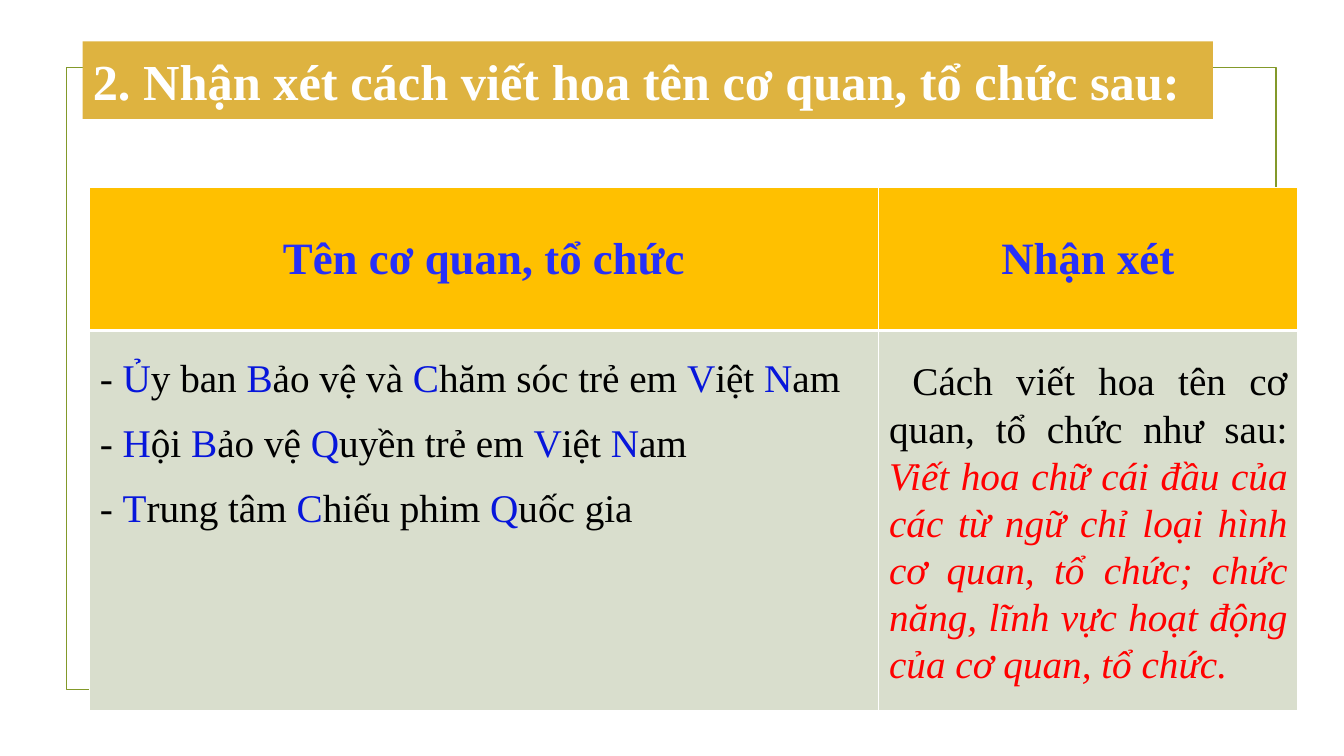
"""Build a Vietnamese lesson slide on capitalising the names of organisations."""
import dataclasses
import itertools

import pptx
import pptx.dml.color
import pptx.enum.shapes
import pptx.enum.text
import pptx.oxml
import pptx.oxml.ns
import pptx.util

Inches = pptx.util.Inches
Align = pptx.enum.text.PP_ALIGN
Anchor = pptx.enum.text.MSO_ANCHOR

FONT = "Times New Roman"
WHITE, BLACK, RED = "FFFFFF", "000000", "FF0000"
OLIVE, GOLD, AMBER, SAGE = "83992A", "DEB340", "FFC000", "D9DECD"
HEADING_BLUE, CAPITAL_BLUE = "2630F8", "0716DB"


@dataclasses.dataclass(frozen=True)
class Span:
    text: str
    color: str
    size: int = 28
    bold: bool = False
    italic: bool = False


@dataclasses.dataclass(frozen=True)
class Cell:
    paragraphs: list[list[Span]]
    fill: str
    bottom_border: float = 1
    align: Align = Align.LEFT
    anchor: Anchor = Anchor.TOP
    line_spacing: float = 1.0


def rgb(color: str) -> pptx.dml.color.RGBColor:
    return pptx.dml.color.RGBColor.from_string(color)


def paint(fill: pptx.dml.fill.FillFormat, color: str) -> None:
    fill.solid()
    fill.fore_color.rgb = rgb(color)


def write(frame: pptx.text.text.TextFrame, paragraphs: list[list[Span]],
          align: Align, line_spacing: float = 1.0) -> None:
    frame.word_wrap = True
    for index, spans in enumerate(paragraphs):
        paragraph = frame.add_paragraph() if index else frame.paragraphs[0]
        paragraph.alignment = align
        paragraph.line_spacing = line_spacing
        for span in spans:
            run = paragraph.add_run()
            run.text = span.text
            run.font.name = FONT
            run.font.size = pptx.util.Pt(span.size)
            run.font.bold = span.bold
            run.font.italic = span.italic
            run.font.color.rgb = rgb(span.color)


def mark_capitals(line: str) -> list[Span]:
    return [Span("".join(letters), CAPITAL_BLUE if capital else BLACK)
            for capital, letters in itertools.groupby(line, str.isupper)]


def add_borders(cell: pptx.table._Cell, bottom: float) -> None:
    properties = cell._tc.get_or_add_tcPr()
    for side, points in {"L": 1, "R": 1, "T": 1, "B": bottom}.items():
        properties.append(pptx.oxml.parse_xml(
            f'<a:ln{side} {pptx.oxml.ns.nsdecls("a")} w="{pptx.util.Pt(points)}">'
            f'<a:solidFill><a:srgbClr val="{WHITE}"/></a:solidFill></a:ln{side}>'))


def add_frame(slide: pptx.slide.Slide) -> None:
    frame = slide.shapes.add_shape(
        pptx.enum.shapes.MSO_SHAPE.RECTANGLE,
        Inches(0.66), Inches(0.67), Inches(12), Inches(6.17))
    frame.shadow.inherit = False
    frame.fill.background()
    frame.line.color.rgb = rgb(OLIVE)
    frame.line.width = pptx.util.Pt(1.25)
    slide.shapes._spTree.insert(2, frame._element)


def format_title(slide: pptx.slide.Slide, heading: str) -> None:
    title = slide.shapes.title
    title.left, title.top = Inches(0.82), Inches(0.41)
    title.width, title.height = Inches(11.21), Inches(0.77)
    title._element.spPr.append(pptx.oxml.parse_xml(
        f'<a:prstGeom {pptx.oxml.ns.nsdecls("a")} prst="roundRect"><a:avLst/></a:prstGeom>'))
    paint(title.fill, GOLD)
    title.text_frame.auto_size = pptx.enum.text.MSO_AUTO_SIZE.NONE
    title.text_frame.vertical_anchor = Anchor.MIDDLE
    write(title.text_frame, [[Span(heading, WHITE, 36, bold=True)]], Align.JUSTIFY)


def add_grid(slide: pptx.slide.Slide, rows: list[list[Cell]]) -> None:
    widths, heights = (7.82, 4.16), (1.42, 3.77)
    grid = slide.shapes.add_table(
        len(heights), len(widths), Inches(0.89), Inches(1.86),
        Inches(sum(widths)), Inches(sum(heights))).table
    for column, width in zip(grid.columns, widths):
        column.width = Inches(width)
    for row, height, contents in zip(grid.rows, heights, rows):
        row.height = Inches(height)
        for cell, content in zip(row.cells, contents):
            add_borders(cell, content.bottom_border)
            paint(cell.fill, content.fill)
            cell.vertical_anchor = content.anchor
            write(cell.text_frame, content.paragraphs, content.align, content.line_spacing)


def add_remark(slide: pptx.slide.Slide, spans: list[Span]) -> None:
    remark = slide.shapes.add_textbox(
        Inches(8.72), Inches(3.49), Inches(4.15), Inches(4))
    write(remark.text_frame, [spans], Align.JUSTIFY)


def main() -> None:
    presentation = pptx.Presentation()
    presentation.slide_width, presentation.slide_height = Inches(13.33), Inches(7.5)
    slide = presentation.slides.add_slide(presentation.slide_layouts[5])

    headings = [
        Cell([[Span(heading, HEADING_BLUE, 32, bold=True)]], AMBER, 3,
             Align.CENTER, Anchor.MIDDLE)
        for heading in ("Tên cơ quan, tổ chức", "Nhận xét")]
    organisations = [
        "- Ủy ban Bảo vệ và Chăm sóc trẻ em Việt Nam",
        "- Hội Bảo vệ Quyền trẻ em Việt Nam",
        "- Trung tâm Chiếu phim Quốc gia",
    ]
    body = [
        Cell([mark_capitals(line) for line in organisations], SAGE, line_spacing=1.5),
        Cell([], SAGE),
    ]

    add_frame(slide)
    format_title(slide, "2. Nhận xét cách viết hoa tên cơ quan, tổ chức sau:")
    add_grid(slide, [headings, body])
    add_remark(slide, [
        Span(" Cách viết hoa tên cơ quan, tổ chức như sau: ", BLACK),
        Span("Viết hoa chữ cái đầu của các từ ngữ chỉ loại hình cơ quan, tổ chức; "
             "chức năng, lĩnh vực hoạt động của cơ quan, tổ chức.", RED, italic=True),
    ])
    presentation.save("out.pptx")


if __name__ == "__main__":
    main()
